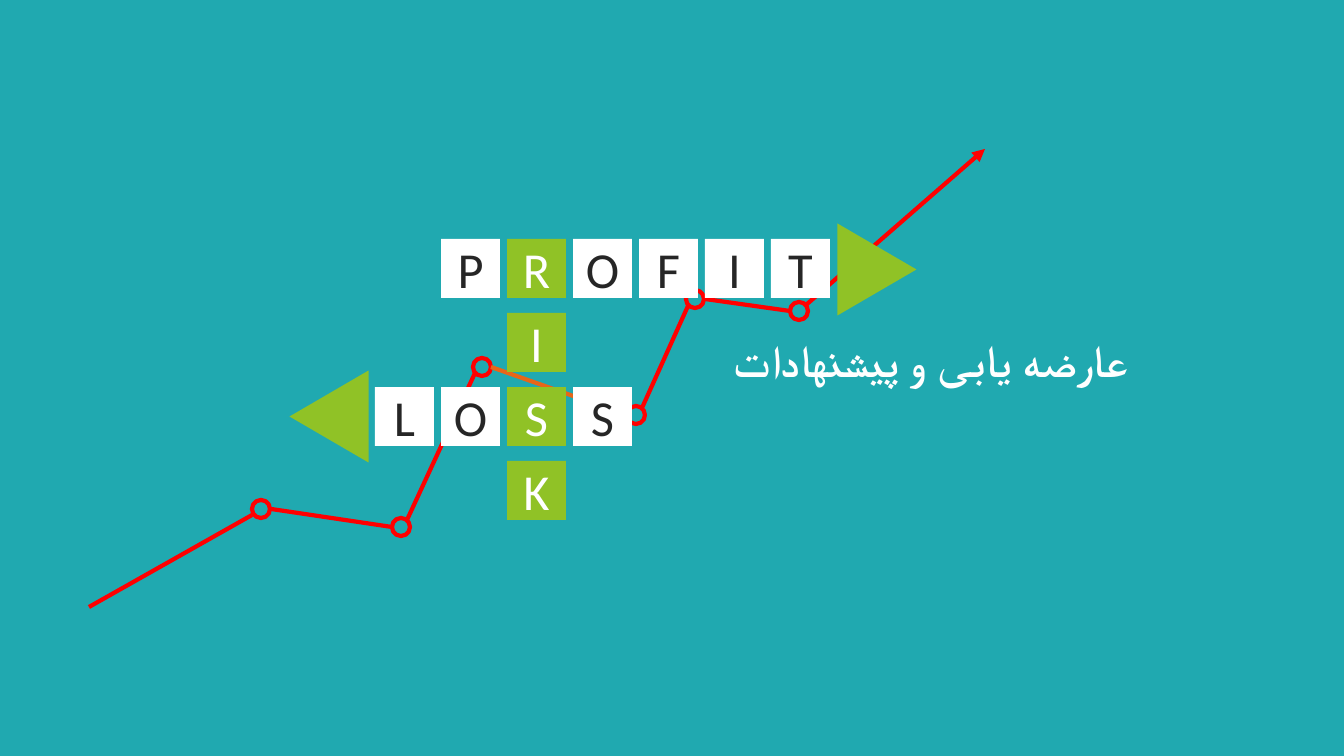
from typing import NamedTuple

from pptx import Presentation
from pptx import util as u
from pptx.dml.color import RGBColor
from pptx.enum import shapes, text
from pptx.oxml import parse_xml
from pptx.oxml.ns import nsdecls

SCALE = 12192000 / 1344
TEAL, GREEN, RED, ORANGE = "20A9B0", "90C226", "FF0000", "E76618"
WHITE, DARK = "FFFFFF", "262626"
KIND = shapes.MSO_SHAPE


class Word(NamedTuple):
    letters: str
    col: int
    row: int
    down: bool
    fill: str
    ink: str


class Leg(NamedTuple):
    x1: int
    y1: int
    x2: int
    y2: int
    color: str = RED
    arrow: bool = False


class Arrow(NamedTuple):
    left: int
    top: int
    turn: int


# Later words own the tiles where they cross earlier ones
WORDS = [
    Word("PROFIT", 1, 0, False, WHITE, DARK),
    Word("LOSS", 0, 2, False, WHITE, DARK),
    Word("RISK", 2, 0, True, GREEN, WHITE),
]
RING = 18
RINGS = [(790, 302), (252, 500), (473, 358), (686, 290), (392, 518), (627, 406)]
LEGS = [
    Leg(89, 607, 252, 515),
    Leg(392, 527, 271, 509),
    Leg(475, 373, 407, 520),
    Leg(627, 415, 491, 367, ORANGE),
    Leg(688, 306, 642, 408),
    Leg(705, 299, 790, 311),
    Leg(806, 305, 985, 149, arrow=True),
]
ARROWS = [Arrow(831, 230, 90), Arrow(283, 377, 270)]
TILE, STEP_X, STEP_Y = 59, 66, 74
GRID_X, GRID_Y = 375, 239


def px(n: int) -> u.Emu:
    return u.Emu(round(n * SCALE))


def rgb(code: str) -> RGBColor:
    return RGBColor.from_string(code)


def write(shape, words: str, *, size: int, font: str, color: str,
          bold: bool = False, align=text.PP_ALIGN.CENTER):
    """Fill a shape with one formatted paragraph and return it."""
    frame = shape.text_frame
    frame.word_wrap = True
    frame.vertical_anchor = text.MSO_ANCHOR.MIDDLE
    para = frame.paragraphs[0]
    para.alignment = align
    run = para.add_run()
    run.text = words
    run.font.size = u.Pt(size)
    run.font.name = font
    run.font.bold = bold
    run.font.color.rgb = rgb(color)
    return para


def draw(slide, kind, left: int, top: int, wide: int, high: int,
         fill: str = "", line: str = ""):
    shape = slide.shapes.add_shape(kind, px(left), px(top), px(wide), px(high))
    shape.shadow.inherit = False
    if fill:
        shape.fill.solid()
        shape.fill.fore_color.rgb = rgb(fill)
    else:
        shape.fill.background()
    if line:
        shape.line.color.rgb = rgb(line)
        shape.line.width = u.Pt(3)
    else:
        shape.line.fill.background()
    return shape


def link(slide, leg: Leg) -> None:
    line = slide.shapes.add_connector(
        shapes.MSO_CONNECTOR.STRAIGHT,
        px(leg.x1), px(leg.y1), px(leg.x2), px(leg.y2))
    line.line.color.rgb = rgb(leg.color)
    line.line.width = u.Pt(3)
    if leg.arrow:
        line.line._get_or_add_ln().append(
            parse_xml(f'<a:tailEnd {nsdecls("a")} type="triangle"/>'))
    line._element.spPr.append(parse_xml(f'<a:effectLst {nsdecls("a")}/>'))


def head(slide) -> None:
    title = slide.shapes.title
    title.left, title.top = px(613), px(322)
    title.width, title.height = px(526), px(70)
    para = write(title, "عارضه یابی و پیشنهادات", size=32, font="Karla",
                 color=WHITE, bold=True, align=text.PP_ALIGN.RIGHT)
    title.text_frame.auto_size = text.MSO_AUTO_SIZE.SHAPE_TO_FIT_TEXT
    para.line_spacing = 1.1
    para._p.get_or_add_pPr().set("rtl", "1")
    para.runs[0].font._element.append(
        parse_xml(f'<a:cs {nsdecls("a")} typeface="Karla"/>'))


def cross(slide) -> None:
    """Lay the crossing words out as letter tiles."""
    cells = {}
    for word in WORDS:
        for i, letter in enumerate(word.letters):
            spot = (word.col + i * (not word.down), word.row + i * word.down)
            cells[spot] = (letter, word.fill, word.ink)
    for (col, row), (letter, fill, ink) in cells.items():
        tile = draw(slide, KIND.RECTANGLE, GRID_X + col * STEP_X,
                    GRID_Y + row * STEP_Y, TILE, TILE, fill)
        frame = tile.text_frame
        frame.margin_left = frame.margin_right = 0
        write(tile, letter, size=36, font="Calibri", color=ink)


def main() -> None:
    deck = Presentation()
    deck.slide_width, deck.slide_height = px(1344), px(756)
    slide = deck.slides.add_slide(deck.slide_layouts[5])
    slide.background.fill.solid()
    slide.background.fill.fore_color.rgb = rgb(TEAL)
    head(slide)
    for left, top in RINGS:
        draw(slide, KIND.OVAL, left, top, RING, RING, line=RED)
    for leg in LEGS:
        link(slide, leg)
    cross(slide)
    for arrow in ARROWS:
        shape = draw(slide, KIND.ISOSCELES_TRIANGLE, arrow.left, arrow.top,
                     92, 79, GREEN)
        shape.rotation = arrow.turn
    deck.save("out.pptx")


if __name__ == "__main__":
    main()
